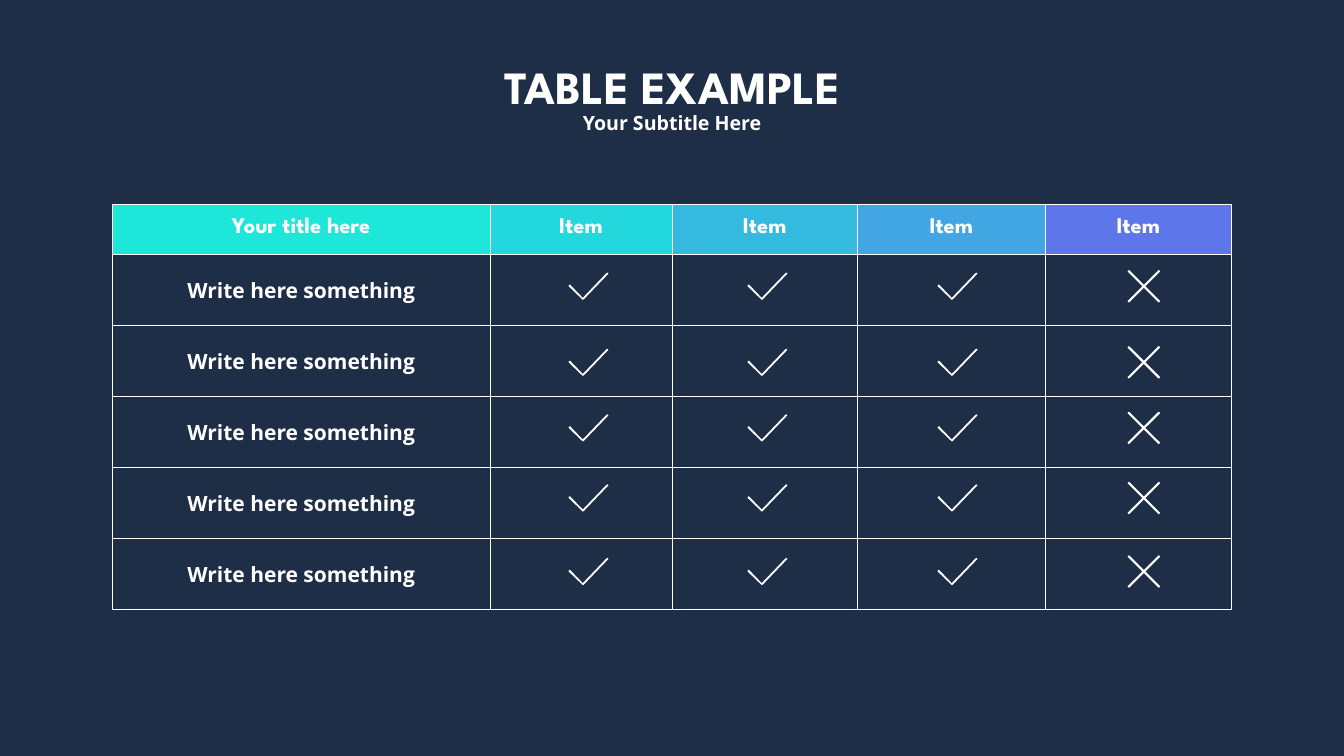
from dataclasses import dataclass

from lxml.etree import SubElement
from pptx import Presentation
from pptx.dml.color import RGBColor
from pptx.enum.text import MSO_ANCHOR as Anchor, MSO_AUTO_SIZE as AutoSize, PP_ALIGN as Align
from pptx.oxml.ns import qn
from pptx.util import Inches, Pt


@dataclass(frozen=True)
class Theme:
    background: str = "1F2E47"
    ink: str = "FFFFFF"
    header_fills: tuple = ("1DE7D8", "23D8DC", "34B9DF", "42A6E3", "5D76EA")
    heading_font: str = "League Spartan"
    body_font: str = "Open Sans"
    title_size: int = 66
    subtitle_size: int = 28
    header_size: int = 32
    label_size: int = 30
    border_width: int = 1


theme = Theme()


def write(frame, text, *, font, size, anchor=Anchor.TOP, line_spacing=None):
    """Put one centred, bold line of text into a text frame."""
    frame.text = text
    frame.vertical_anchor = anchor
    paragraph = frame.paragraphs[0]
    paragraph.alignment = Align.CENTER
    paragraph.space_before = Pt(0)
    if line_spacing:
        paragraph.line_spacing = Pt(line_spacing)
    style = paragraph.runs[0].font
    style.name, style.size, style.bold = font, Pt(size), True
    style.color.rgb = RGBColor.from_string(theme.ink)


def draw_mark(points, left, top):
    """Draw a closed, filled outline whose points are offsets in inches."""
    outline = [(Inches(left + x), Inches(top + y)) for x, y in points]
    builder = slide.shapes.build_freeform(*outline[0])
    builder.add_line_segments(outline[1:], close=True)
    mark = builder.convert_to_shape()
    mark.shadow.inherit = False
    mark.fill.solid()
    mark.fill.fore_color.rgb = RGBColor.from_string(theme.ink)
    mark.line.fill.background()


# Slide and background
deck = Presentation()
deck.slide_width, deck.slide_height = Inches(26.66), Inches(15)
slide = deck.slides.add_slide(deck.slide_layouts[0])
slide.background.fill.solid()
slide.background.fill.fore_color.rgb = RGBColor.from_string(theme.background)

# Title and subtitle
title, subtitle = slide.placeholders
title.left, title.top, title.width, title.height = map(Inches, (9.36, 0.81, 7.96, 1.43))
subtitle.left, subtitle.top, subtitle.width, subtitle.height = map(Inches, (11.44, 2.15, 3.78, 0.57))
write(title.text_frame, "TABLE EXAMPLE", font=theme.heading_font,
      size=theme.title_size, line_spacing=100)
write(subtitle.text_frame, "Your Subtitle Here", font=theme.body_font,
      size=theme.subtitle_size, anchor=Anchor.MIDDLE)
for heading in (title, subtitle):
    heading.text_frame.word_wrap = False
    heading.text_frame.auto_size = AutoSize.SHAPE_TO_FIT_TEXT

# Table grid
headers = ["Your title here"] + ["Item"] * 4
column_widths = [7.49, 3.61, 3.68, 3.72, 3.7]
row_heights = [0.99] + [1.41] * 5
table = slide.shapes.add_table(
    len(row_heights), len(column_widths), Inches(2.23), Inches(4.05),
    Inches(sum(column_widths)), Inches(sum(row_heights))).table
table.first_row = table.horz_banding = False
for column, width in zip(table.columns, column_widths):
    column.width = Inches(width)
for row, height in zip(table.rows, row_heights):
    row.height = Inches(height)

# Header row
for column, (header, fill) in enumerate(zip(headers, theme.header_fills)):
    cell = table.cell(0, column)
    cell.fill.solid()
    cell.fill.fore_color.rgb = RGBColor.from_string(fill)
    cell.margin_top = Inches(0.27)
    write(cell.text_frame, header, font=theme.heading_font, size=theme.header_size)

# Body rows
for row in range(1, len(row_heights)):
    for column in range(len(headers)):
        table.cell(row, column).fill.background()
    label = table.cell(row, 0)
    label.margin_top = Inches(0.44)
    write(label.text_frame, "Write here something", font=theme.body_font, size=theme.label_size)

# Cell borders, which must come before the fill in each cell's properties
for cell in table.iter_cells():
    properties = cell._tc.get_or_add_tcPr()
    for position, side in enumerate(("a:lnL", "a:lnR", "a:lnT", "a:lnB")):
        border = SubElement(properties, qn(side), w=str(Pt(theme.border_width)))
        SubElement(SubElement(border, qn("a:solidFill")), qn("a:srgbClr"), val=theme.ink)
        properties.insert(position, border)

# Mark outlines: the cross is one arm turned four times about its centre
check = [(0.79, 0.02), (0.77, 0), (0.75, 0.01), (0.28, 0.5), (0.03, 0.24), (0.01, 0.24),
         (0, 0.26), (0, 0.27), (0.27, 0.53), (0.28, 0.54), (0.3, 0.53), (0.78, 0.03)]
arm = [(0.03, 0), (0.32, -0.29), (0.32, -0.3), (0.3, -0.32), (0.29, -0.32)]
cross = []
for turn in range(4):
    cross += [(0.32 + x, 0.32 + y) for x, y in arm]
    arm = [(y, -x) for x, y in arm]

# Three checks and a cross in each body row
for check_top in (5.41, 6.92, 8.22, 9.61, 11.07):
    for check_left in (11.28, 14.83, 18.6):
        draw_mark(check, check_left, check_top)
    draw_mark(cross, 22.37, check_top - 0.05)

deck.save("out.pptx")
